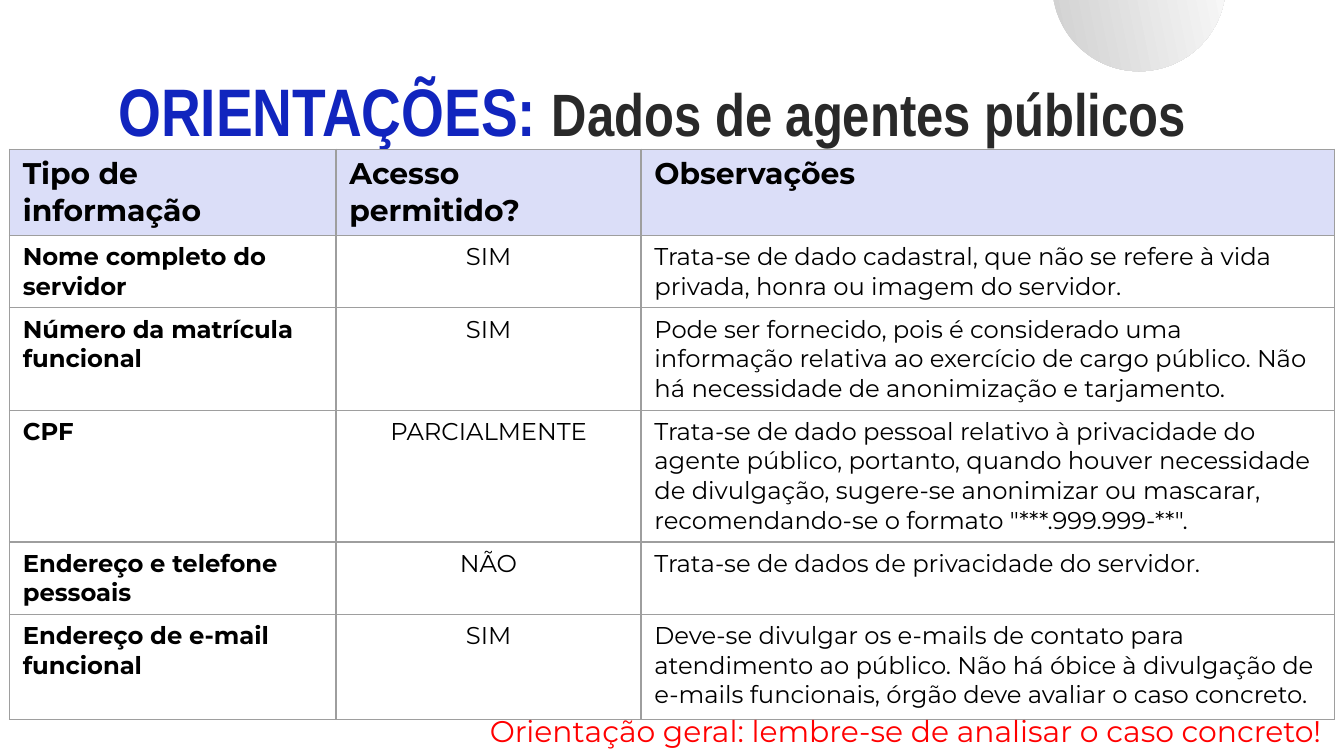
from dataclasses import dataclass

from lxml import etree
from pptx import Presentation
from pptx import util as u
from pptx.dml.color import RGBColor
from pptx.enum import shapes, text
from pptx.oxml.ns import qn

PX = 4572


@dataclass(frozen=True)
class Theme:
    blue: str = "1125BE"
    dark: str = "292929"
    black: str = "000000"
    red: str = "FF0000"
    header: str = "DBDEF8"
    border: str = "9E9E9E"
    gradient: tuple = ("CCCCCC", "FFFFFF")
    title_font: str = "Arial Narrow"
    body_font: str = "Montserrat"
    title_size: int = 36
    subtitle_size: int = 32
    heading_size: int = 16
    cell_size: int = 13
    border_width: float = 0.75


THEME = Theme()
COLUMNS = (486, 454, 1032)
ROWS = (128, 108, 152, 196, 108, 156)
CONTENT = (
    ("Tipo de informação", "Acesso permitido?", "Observações"),
    ("Nome completo do servidor", "SIM",
     "Trata-se de dado cadastral, que não se refere à vida privada, honra ou imagem do servidor."),
    ("Número da matrícula funcional", "SIM",
     "Pode ser fornecido, pois é considerado uma informação relativa ao exercício de cargo público. "
     "Não há necessidade de anonimização e tarjamento."),
    ("CPF", "PARCIALMENTE",
     "Trata-se de dado pessoal relativo à privacidade do agente público, portanto, quando houver "
     "necessidade de divulgação, sugere-se anonimizar ou mascarar, recomendando-se o formato "
     '"***.999.999-**".'),
    ("Endereço e telefone pessoais", "NÃO", "Trata-se de dados de privacidade do servidor."),
    ("Endereço de e-mail funcional", "SIM",
     "Deve-se divulgar os e-mails de contato para atendimento ao público. Não há óbice à divulgação "
     "de e-mails funcionais, órgão deve avaliar o caso concreto."),
)


def px(*lengths):
    return [u.Emu(length * PX) for length in lengths]


def set_all(target, values):
    for name, value in values.items():
        setattr(target, name, value)


def add_run(paragraph, words, size, color, font=THEME.body_font, bold=False):
    run = paragraph.add_run()
    run.text = words
    set_all(run.font, {"name": font, "size": u.Pt(size), "bold": bold})
    run.font.color.rgb = RGBColor.from_string(color)


def add_circle(slide):
    circle = slide.shapes.add_shape(shapes.MSO_SHAPE.OVAL, *px(1566, -152, 258, 258))
    circle.shadow.inherit = False
    circle.line.fill.background()
    circle.fill.gradient()
    circle.fill.gradient_angle = 270
    for stop, color in zip(circle.fill.gradient_stops, THEME.gradient):
        stop.color.rgb = RGBColor.from_string(color)
    circle.rotation = 258.6
    circle._element.spPr.find(qn("a:xfrm")).set("flipH", "1")
    slide.shapes._spTree.insert(2, circle._element)


def fill_title(slide):
    title = slide.shapes.title
    set_all(title, dict(zip(("left", "top", "width", "height"), px(156, 83, 1688, 188))))
    frame = title.text_frame
    inset = u.Inches(0.1)
    set_all(frame, {
        "margin_left": inset, "margin_top": inset, "margin_right": inset, "margin_bottom": inset,
        "word_wrap": True, "auto_size": text.MSO_AUTO_SIZE.NONE,
        "vertical_anchor": text.MSO_ANCHOR.TOP,
    })
    paragraph = frame.paragraphs[0]
    paragraph.alignment = text.PP_ALIGN.LEFT
    add_run(paragraph, "ORIENTAÇÕES: ", THEME.title_size, THEME.blue, THEME.title_font, True)
    add_run(paragraph, "Dados de agentes públicos", THEME.subtitle_size, THEME.dark,
            THEME.title_font, True)


def add_borders(cell):
    properties = cell._tc.get_or_add_tcPr()
    for side in ("a:lnL", "a:lnR", "a:lnT", "a:lnB"):
        line = etree.SubElement(properties, qn(side), w=str(u.Pt(THEME.border_width)))
        fill = etree.SubElement(line, qn("a:solidFill"))
        etree.SubElement(fill, qn("a:srgbClr"), val=THEME.border)


def fill_cell(cell, words, is_header, column):
    add_borders(cell)
    if is_header:
        cell.fill.solid()
        cell.fill.fore_color.rgb = RGBColor.from_string(THEME.header)
    else:
        cell.fill.background()
    paragraph = cell.text_frame.paragraphs[0]
    if column == 1 and not is_header:
        paragraph.alignment = text.PP_ALIGN.CENTER
    size = THEME.heading_size if is_header else THEME.cell_size
    add_run(paragraph, words, size, THEME.black, bold=is_header or column == 0)


def add_guidance_table(slide):
    frame = slide.shapes.add_table(len(ROWS), len(COLUMNS),
                                   *px(14, 222, sum(COLUMNS), sum(ROWS)))
    table = frame.table
    set_all(table, {"first_row": False, "horz_banding": False})
    for column, width in zip(table.columns, px(*COLUMNS)):
        column.width = width
    for row, height in zip(table.rows, px(*ROWS)):
        row.height = height
    for row_index, row in enumerate(CONTENT):
        for column_index, words in enumerate(row):
            fill_cell(table.cell(row_index, column_index), words, row_index == 0, column_index)


def add_reminder(slide):
    frame = slide.shapes.add_textbox(*px(497, 1051, 1490, 74)).text_frame
    set_all(frame, {"word_wrap": True, "auto_size": text.MSO_AUTO_SIZE.SHAPE_TO_FIT_TEXT})
    paragraph = frame.paragraphs[0]
    paragraph.alignment = text.PP_ALIGN.RIGHT
    add_run(paragraph, "Orientação geral: lembre-se de analisar o caso concreto!",
            THEME.heading_size, THEME.red)


def main():
    presentation = Presentation()
    width, height = px(2000, 1125)
    set_all(presentation, {"slide_width": width, "slide_height": height})
    slide = presentation.slides.add_slide(presentation.slide_layouts[5])
    add_circle(slide)
    fill_title(slide)
    add_guidance_table(slide)
    add_reminder(slide)
    presentation.save("out.pptx")


if __name__ == "__main__":
    main()
